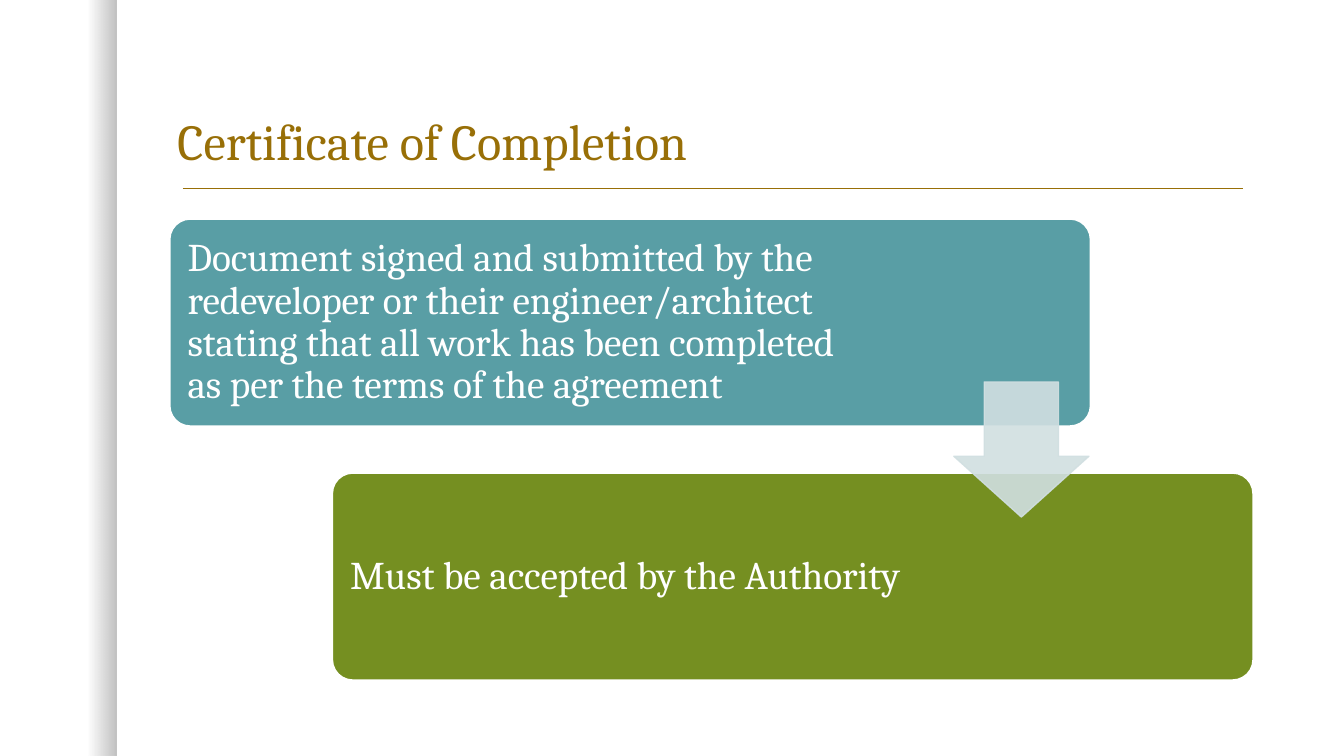
from lxml.etree import SubElement
from pptx import Presentation
from pptx.dml.color import RGBColor as RGB
from pptx.enum.shapes import MSO_CONNECTOR as Connector, MSO_SHAPE as Shape
from pptx.enum.text import MSO_ANCHOR as Anchor, MSO_AUTO_SIZE as AutoSize, PP_ALIGN as Align
from pptx.oxml.ns import qn
from pptx.util import Inches, Pt

WIDTH, HEIGHT = Inches(13.33), Inches(7.5)
COLORS = {
    "title": "986F07",
    "teal": "599EA5",
    "green": "758F21",
    "arrow": "D1DFE1",
    "white": "FFFFFF",
    "shadow": "000000",
}
FONT = "Cambria"

# Shares of the slide, in percent of its width or height
CARD_LEFT, CARD_TOP = 12.61, 28.93
CARD_WIDTH, CARD_HEIGHT = 68.55, 27.47
STEP_X, STEP_Y = 12.1, 33.6
PAD_X, PAD_Y = 0.45, 0.8
STEPS = [
    ("Document signed and submitted by the redeveloper or their engineer/architect "
     "stating that all work has been completed as per the terms of the agreement",
     "teal", 52.59),
    ("Must be accepted by the Authority", "green", 45.46),
]


def color(name):
    return RGB.from_string(COLORS[name])


def across(share):
    return round(WIDTH * share / 100)


def down(share):
    return round(HEIGHT * share / 100)


def box(left, top, width, height):
    return across(left), down(top), across(width), down(height)


def set_alpha(fill_element, percents):
    """Give each colour inside the fill its opacity, in order."""
    for element, percent in zip(fill_element.iter(qn("a:srgbClr")), percents):
        SubElement(element, qn("a:alpha"), val=str(percent * 1000))


def format_text(text_frame, text, size, color_name, anchor):
    text_frame.text = text
    text_frame.word_wrap = True
    text_frame.auto_size = AutoSize.NONE
    text_frame.vertical_anchor = anchor
    paragraph = text_frame.paragraphs[0]
    paragraph.alignment = Align.LEFT
    paragraph.line_spacing = 0.9
    font = paragraph.runs[0].font
    font.name, font.size = FONT, Pt(size)
    font.color.rgb = color(color_name)


def add_preset(slide, kind, place, fill_name, line_width):
    shape = slide.shapes.add_shape(kind, *place)
    shape.shadow.inherit = False
    shape.fill.solid()
    shape.fill.fore_color.rgb = color(fill_name)
    shape.line.width = Pt(line_width)
    return shape


def add_edge_shadow(slide):
    band = slide.shapes.add_shape(Shape.RECTANGLE, *box(0, 0, 8.7, 100))
    band.shadow.inherit = False
    band.line.fill.background()
    band.fill.gradient()
    band.fill.gradient_angle = 0
    for stop, position in zip(band.fill.gradient_stops, (0.75, 1)):
        stop.position = position
        stop.color.rgb = color("shadow")
    set_alpha(band._element.spPr.find(qn("a:gradFill")), (0, 25))


def add_title_rule(slide):
    rule = slide.shapes.add_connector(
        Connector.STRAIGHT, across(13.6), down(24.9), across(92.5), down(24.9))
    rule.line.color.rgb = color("title")
    rule.line.width = Pt(1)
    SubElement(rule._element.spPr, qn("a:effectLst"))


def set_title(slide, text):
    title = slide.shapes.title
    title.left, title.top, title.width, title.height = box(12.45, 5.6, 80.65, 17.73)
    format_text(title.text_frame, text, 36, "title", Anchor.BOTTOM)


def add_step(slide, index, text, fill_name, text_width):
    left, top = CARD_LEFT + index * STEP_X, CARD_TOP + index * STEP_Y
    card = add_preset(slide, Shape.ROUNDED_RECTANGLE,
                      box(left, top, CARD_WIDTH, CARD_HEIGHT), fill_name, 1.5)
    card.adjustments[0] = 0.1
    card.line.color.rgb = color("white")

    label = slide.shapes.add_textbox(
        *box(left + PAD_X, top + PAD_Y, text_width, CARD_HEIGHT - 2 * PAD_Y))
    frame = label.text_frame
    frame.margin_left = frame.margin_right = Inches(0.12)
    frame.margin_top = frame.margin_bottom = Inches(0.12)
    format_text(frame, text, 28, "white", Anchor.MIDDLE)


def add_down_arrow(slide):
    arrow = add_preset(slide, Shape.DOWN_ARROW, box(70.97, 50.53, 10.05, 17.87), "arrow", 1)
    arrow.adjustments[0], arrow.adjustments[1] = 0.55, 0.45
    arrow.line.color.rgb = color("arrow")
    set_alpha(arrow._element.spPr, (90, 90))


def main():
    presentation = Presentation()
    presentation.slide_width, presentation.slide_height = WIDTH, HEIGHT
    slide = presentation.slides.add_slide(presentation.slide_layouts[5])
    add_edge_shadow(slide)
    add_title_rule(slide)
    set_title(slide, "Certificate of Completion")
    for index, step in enumerate(STEPS):
        add_step(slide, index, *step)
    add_down_arrow(slide)
    presentation.save("out.pptx")


if __name__ == "__main__":
    main()
